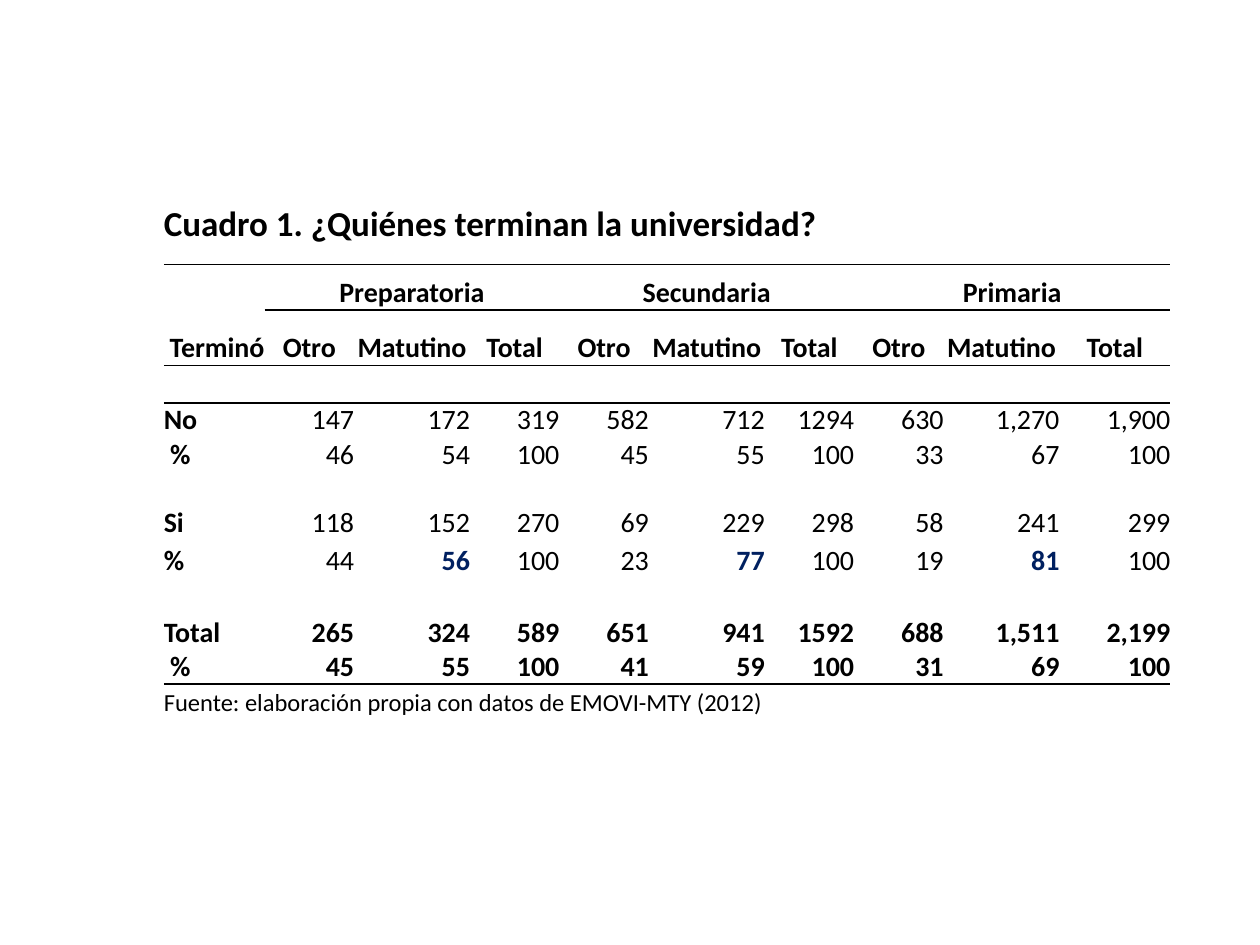
import lxml.etree
import pptx
import pptx.dml.color
import pptx.enum.text
import pptx.oxml.ns
import pptx.util
from pptx.util import Inches

ALIGN = pptx.enum.text.PP_ALIGN
ANCHOR = pptx.enum.text.MSO_ANCHOR
BLACK, WHITE, NAVY = "000000", "FFFFFF", "002060"
PLAIN_TABLE_STYLE = "{2D5ABB26-0587-4C30-8999-92F81FD0307C}"

COLUMN_WIDTHS = [0.8] + [0.71, 0.92, 0.71] * 2 + [0.71, 0.92, 0.88]
ROW_HEIGHTS = [0.63, 0.36, 0.44, 0.3, 0.27, 0.27, 0.27, 0.27, 0.3, 0.3, 0.27, 0.27, 0.27]
TITLE_ROW, LEVEL_ROW, SHIFT_ROW, LAST_DATA_ROW, SOURCE_ROW = 0, 1, 2, 11, 12

LEVELS = ["Preparatoria", "Secundaria", "Primaria"]
SHIFTS = ["Otro", "Matutino", "Total"]
DATA = {
    4: ["No", "147", "172", "319", "582", "712", "1294", "630", "1,270", "1,900"],
    5: [" %", "46", "54", "100", "45", "55", "100", "33", "67", "100"],
    7: ["Si", "118", "152", "270", "69", "229", "298", "58", "241", "299"],
    8: ["% ", "44", "56", "100", "23", "77", "100", "19", "81", "100"],
    10: ["Total", "265", "324", "589", "651", "941", "1592", "688", "1,511", "2,199"],
    11: [" %", "45", "55", "100", "41", "59", "100", "31", "69", "100"],
}
HIGHLIGHT_ROW, HIGHLIGHT_COLUMNS = 8, (2, 5, 8)
TOTAL_ROWS = (10, 11)


def color(value):
    return pptx.dml.color.RGBColor.from_string(value)


def write(cell, text, size=16, bold=True, ink=BLACK, align=ALIGN.LEFT, anchor=ANCHOR.BOTTOM):
    cell.vertical_anchor = anchor
    para = cell.text_frame.paragraphs[0]
    para.alignment = align
    span = para.add_run()
    span.text = text
    span.font.name = "Calibri"
    span.font.size = pptx.util.Pt(size)
    span.font.bold = bold
    span.font.color.rgb = color(ink)


def add_border(cell, tag):
    """Draw a 1 pt black line on one side: a:lnT or a:lnB."""
    properties = cell._tc.get_or_add_tcPr()
    line = lxml.etree.SubElement(properties, pptx.oxml.ns.qn(tag), w=str(pptx.util.Pt(1)))
    fill = lxml.etree.SubElement(line, pptx.oxml.ns.qn("a:solidFill"))
    lxml.etree.SubElement(fill, pptx.oxml.ns.qn("a:srgbClr"), val=BLACK)


def has_rule_below(row, column):
    if row == LEVEL_ROW:
        return column > 0
    return row in (TITLE_ROW, SHIFT_ROW, LAST_DATA_ROW)


def format_cell(cell, row, column):
    cell.margin_left = cell.margin_right = cell.margin_top = cell.margin_bottom = 0
    if has_rule_below(row - 1, column):
        add_border(cell, "a:lnT")
    if has_rule_below(row, column):
        add_border(cell, "a:lnB")
    cell.fill.solid()
    cell.fill.fore_color.rgb = color(WHITE)
    # Empty cells must not stretch the short rows
    end = cell.text_frame.paragraphs[0]._p.get_or_add_endParaRPr()
    end.set("sz", "1200")


def add_plain_table(page):
    frame = page.shapes.add_table(
        len(ROW_HEIGHTS), len(COLUMN_WIDTHS), Inches(1.3), Inches(1.47),
        Inches(sum(COLUMN_WIDTHS)), Inches(sum(ROW_HEIGHTS)))
    table = frame.table
    table.first_row = table.horz_banding = False
    table._tbl.tblPr.find(pptx.oxml.ns.qn("a:tableStyleId")).text = PLAIN_TABLE_STYLE
    for column, width in zip(table.columns, COLUMN_WIDTHS):
        column.width = Inches(width)
    for row, height in zip(table.rows, ROW_HEIGHTS):
        row.height = Inches(height)
    for row in range(len(ROW_HEIGHTS)):
        for column in range(len(COLUMN_WIDTHS)):
            format_cell(table.cell(row, column), row, column)
    return table


def merge(table, row, column, last_row, last_column):
    cell = table.cell(row, column)
    cell.merge(table.cell(last_row, last_column))
    return cell


def fill_headings(table):
    title = merge(table, TITLE_ROW, 0, TITLE_ROW, 9)
    write(title, "Cuadro 1. ¿Quiénes terminan la universidad?", size=20, anchor=ANCHOR.MIDDLE)
    write(merge(table, LEVEL_ROW, 0, SHIFT_ROW, 0), "Terminó", align=ALIGN.RIGHT)
    for index, level in enumerate(LEVELS):
        first = 1 + index * len(SHIFTS)
        write(merge(table, LEVEL_ROW, first, LEVEL_ROW, first + 2), level, align=ALIGN.CENTER)
        for offset, shift in enumerate(SHIFTS):
            write(table.cell(SHIFT_ROW, first + offset), shift, align=ALIGN.CENTER)


def fill_data(table):
    for row, (label, *values) in DATA.items():
        write(table.cell(row, 0), label)
        for column, value in enumerate(values, start=1):
            highlighted = row == HIGHLIGHT_ROW and column in HIGHLIGHT_COLUMNS
            write(table.cell(row, column), value, align=ALIGN.RIGHT,
                  bold=highlighted or row in TOTAL_ROWS,
                  ink=NAVY if highlighted else BLACK)


def main():
    deck = pptx.Presentation()
    deck.slide_width, deck.slide_height = Inches(10), Inches(7.5)
    page = deck.slides.add_slide(deck.slide_layouts.get_by_name("Blank"))
    table = add_plain_table(page)
    fill_headings(table)
    fill_data(table)
    write(merge(table, SOURCE_ROW, 0, SOURCE_ROW, 8),
          "Fuente: elaboración propia con datos de EMOVI-MTY (2012)", size=14, bold=False)
    deck.save("out.pptx")


if __name__ == "__main__":
    main()
